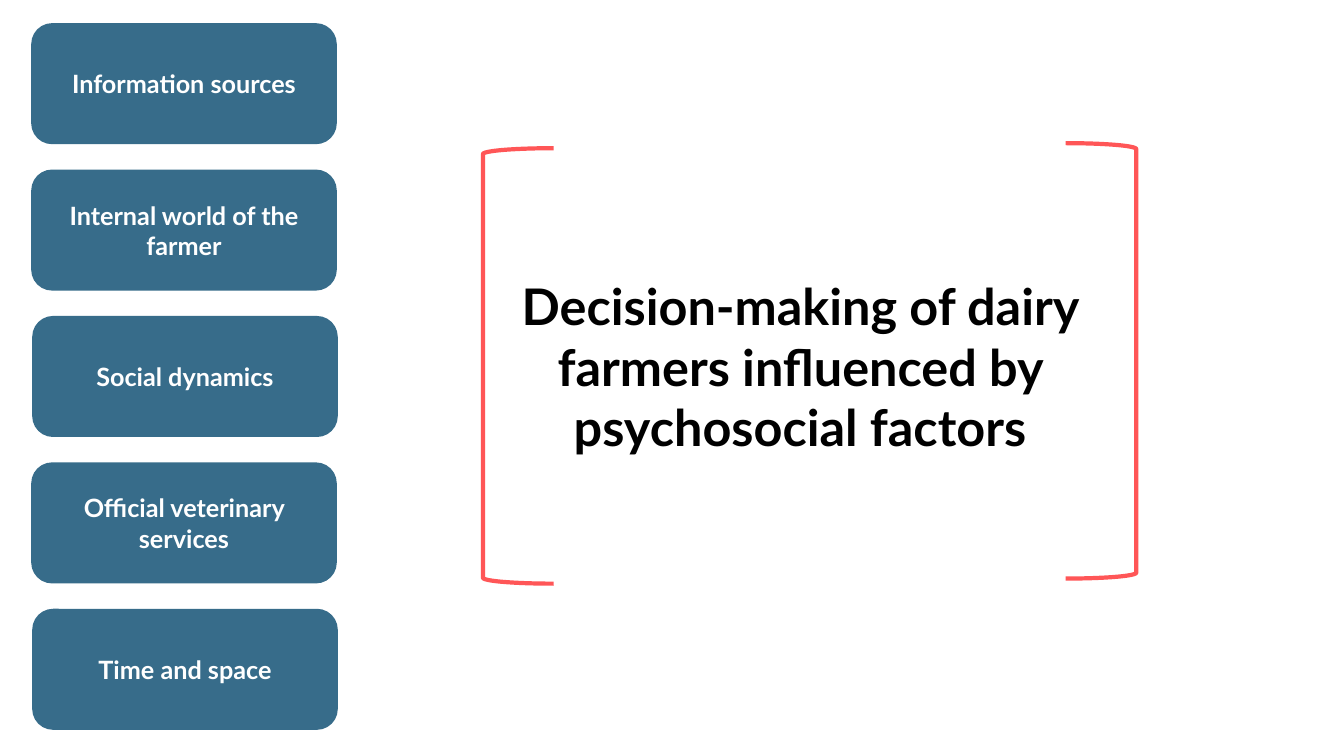
from pptx import Presentation
from pptx.dml.color import RGBColor
from pptx.enum.shapes import MSO_SHAPE
from pptx.enum.text import MSO_ANCHOR, MSO_AUTO_SIZE, PP_ALIGN
from pptx.util import Inches, Pt

ROUNDED = MSO_SHAPE.ROUNDED_RECTANGLE
LEFT_BRACKET = MSO_SHAPE.LEFT_BRACKET
RIGHT_BRACKET = MSO_SHAPE.RIGHT_BRACKET
TOP, MIDDLE = MSO_ANCHOR.TOP, MSO_ANCHOR.MIDDLE
NO_AUTOFIT = MSO_AUTO_SIZE.NONE
CENTER = PP_ALIGN.CENTER

FONT = "Lato"
BLUE, CORAL, WHITE, BLACK = "376C8A", "FF5657", "FFFFFF", "000000"
TITLE_ONLY_LAYOUT = 5

FACTORS = [
    ("Information sources", 0.32),
    ("Internal world of the farmer", 0.32),
    ("Social dynamics", 0.33),
    ("Official veterinary services", 0.32),
    ("Time and space", 0.33),
]
FACTOR_TOP, FACTOR_PITCH = 0.24, 1.4525
CONCLUSION = "Decision-making of dairy farmers influenced by psychosocial factors"


def color(hex_string):
    return RGBColor.from_string(hex_string)


def write(frame, text, size, text_color, anchor):
    frame.text = text
    frame.word_wrap = True
    frame.auto_size = NO_AUTOFIT
    frame.vertical_anchor = anchor
    paragraph = frame.paragraphs[0]
    paragraph.alignment = CENTER
    font = paragraph.runs[0].font
    font.name, font.size, font.bold = FONT, Pt(size), True
    font.color.rgb = color(text_color)


def add_outlined(slide, kind, left, top, width, height, line_color, line_width):
    outlined = slide.shapes.add_shape(
        kind, Inches(left), Inches(top), Inches(width), Inches(height))
    outlined.shadow.inherit = False
    outlined.line.color.rgb = color(line_color)
    outlined.line.width = Pt(line_width)
    return outlined


def add_factor(slide, text, left, top):
    factor = add_outlined(slide, ROUNDED, left, top, 3.01, 1.18, BLUE, 1.5)
    factor.fill.solid()
    factor.fill.fore_color.rgb = color(BLUE)
    write(factor.text_frame, text, 18, WHITE, MIDDLE)


def add_bracket(slide, kind, left, top):
    bracket = add_outlined(slide, kind, left, top, 0.7, 4.32, CORAL, 3)
    bracket.fill.background()


def set_title(slide, text):
    title = slide.shapes.title
    title.left, title.top = Inches(4.6), Inches(2.68)
    title.width, title.height = Inches(6.67), Inches(1.92)
    write(title.text_frame, text, 36, BLACK, TOP)


def main():
    presentation = Presentation()
    presentation.slide_width = Inches(13.33)
    presentation.slide_height = Inches(7.5)
    slide = presentation.slides.add_slide(
        presentation.slide_layouts[TITLE_ONLY_LAYOUT])

    # Column of psychosocial factors
    for row, (text, left) in enumerate(FACTORS):
        add_factor(slide, text, left, FACTOR_TOP + row * FACTOR_PITCH)

    # Bracketed conclusion
    set_title(slide, CONCLUSION)
    add_bracket(slide, LEFT_BRACKET, 4.79, 1.47)
    add_bracket(slide, RIGHT_BRACKET, 10.57, 1.42)

    presentation.save("out.pptx")


if __name__ == "__main__":
    main()
